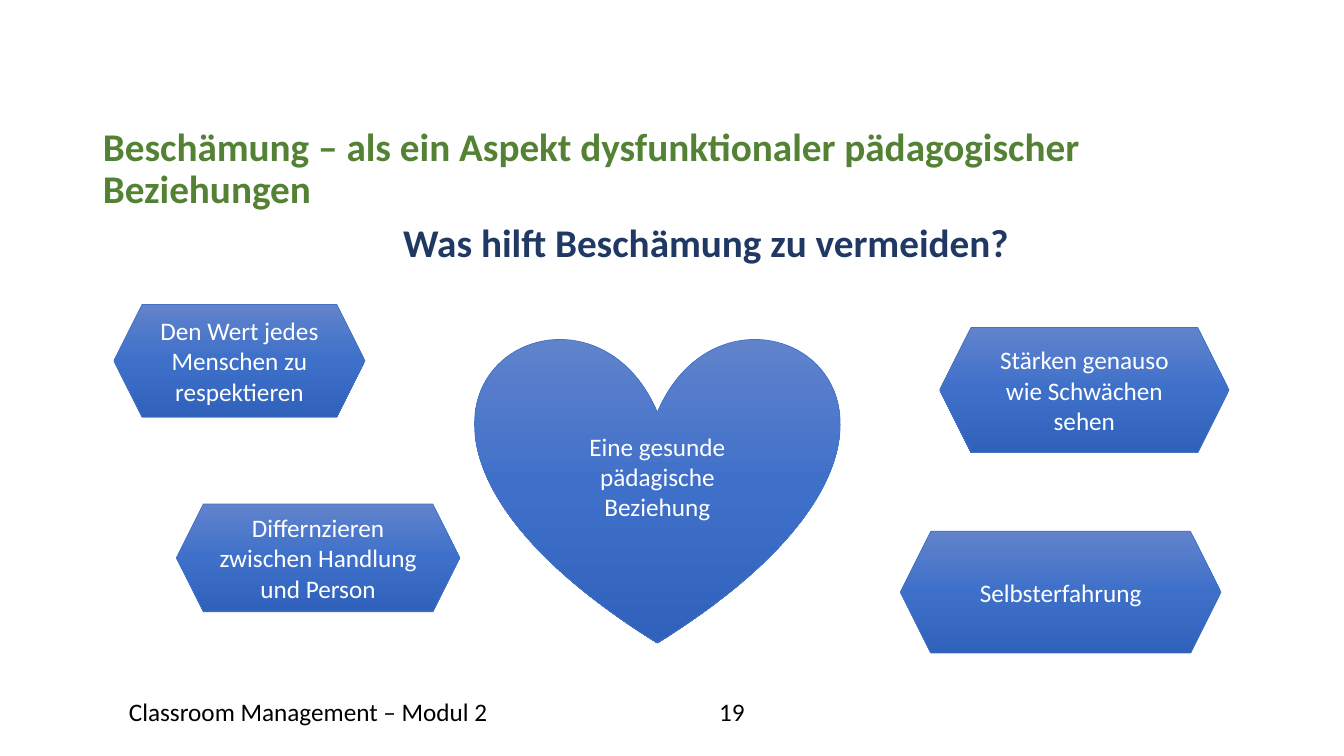
"""Build the slide on how to avoid shaming in pedagogical relationships."""
import copy

from pptx import Presentation
from pptx import util as u
from pptx.dml.color import RGBColor
from pptx.enum import shapes, text
from pptx.oxml.ns import qn

PX = 9144
GRADIENT = [(0, "6183CB"), (0.5, "3E70CA"), (1, "3062BB")]


def px(*lengths):
    return [u.Emu(length * PX) for length in lengths]


def write(box, words, size, color, align, anchor, bold=False, spacing=1.0):
    frame = box.text_frame
    frame.word_wrap = True
    frame.auto_size = text.MSO_AUTO_SIZE.NONE
    frame.vertical_anchor = anchor
    frame.text = words
    para = frame.paragraphs[0]
    para.alignment = align
    para.line_spacing = spacing
    para.font.name = "Calibri"
    para.font.size = u.Pt(size)
    para.font.bold = bold
    para.font.color.rgb = RGBColor.from_string(color)


LEFT, CENTER = text.PP_ALIGN.LEFT, text.PP_ALIGN.CENTER
TOP, MIDDLE = text.MSO_ANCHOR.TOP, text.MSO_ANCHOR.MIDDLE
HEART, HEXAGON = shapes.MSO_SHAPE.HEART, shapes.MSO_SHAPE.HEXAGON

deck = Presentation()
deck.slide_width, deck.slide_height = px(1333, 750)
page = deck.slides.add_slide(deck.slide_layouts[5])

title = page.shapes.title
title.left, title.top, title.width, title.height = px(92, 120, 1182, 97)
write(title, "Beschämung – als ein Aspekt dysfunktionaler pädagogischer Beziehungen",
      28, "548235", LEFT, MIDDLE, bold=True, spacing=0.9)

question = page.shapes.add_textbox(*px(390, 217, 622, 125))
write(question, "Was hilft Beschämung zu vermeiden?",
      28, "203864", LEFT, TOP, bold=True, spacing=0.9)

for words, left, width, align in [
    ("Classroom Management – Modul 2", 118, 450, LEFT),
    ("19", 576, 300, CENTER),
]:
    footer = page.shapes.add_textbox(*px(left, 686, width, 40))
    write(footer, words, 18, "000000", align, TOP)

for kind, words, *place in [
    (HEART, "Eine gesunde pädagische Beziehung", 472, 333, 360, 305),
    (HEXAGON, "Den Wert jedes Menschen zu respektieren", 113, 302, 249, 112),
    (HEXAGON, "Differnzieren zwischen Handlung und Person", 175, 500, 281, 107),
    (HEXAGON, "Stärken genauso wie Schwächen sehen", 932, 325, 287, 124),
    (HEXAGON, "Selbsterfahrung", 893, 527, 318, 121),
]:
    idea = page.shapes.add_shape(kind, *px(*place))
    idea.shadow.inherit = False
    idea.line.color.rgb = RGBColor.from_string("4472C4")
    idea.line.width = u.Pt(0.5)
    idea.fill.gradient()
    idea.fill.gradient_angle = 270
    stop_list = idea._element.spPr.find(".//" + qn("a:gsLst"))
    stop_list.insert(1, copy.deepcopy(stop_list[0]))
    for stop, (position, color) in zip(idea.fill.gradient_stops, GRADIENT):
        stop.position = position
        stop.color.rgb = RGBColor.from_string(color)
    write(idea, words, 18, "FFFFFF", CENTER, MIDDLE)

deck.save("out.pptx")
